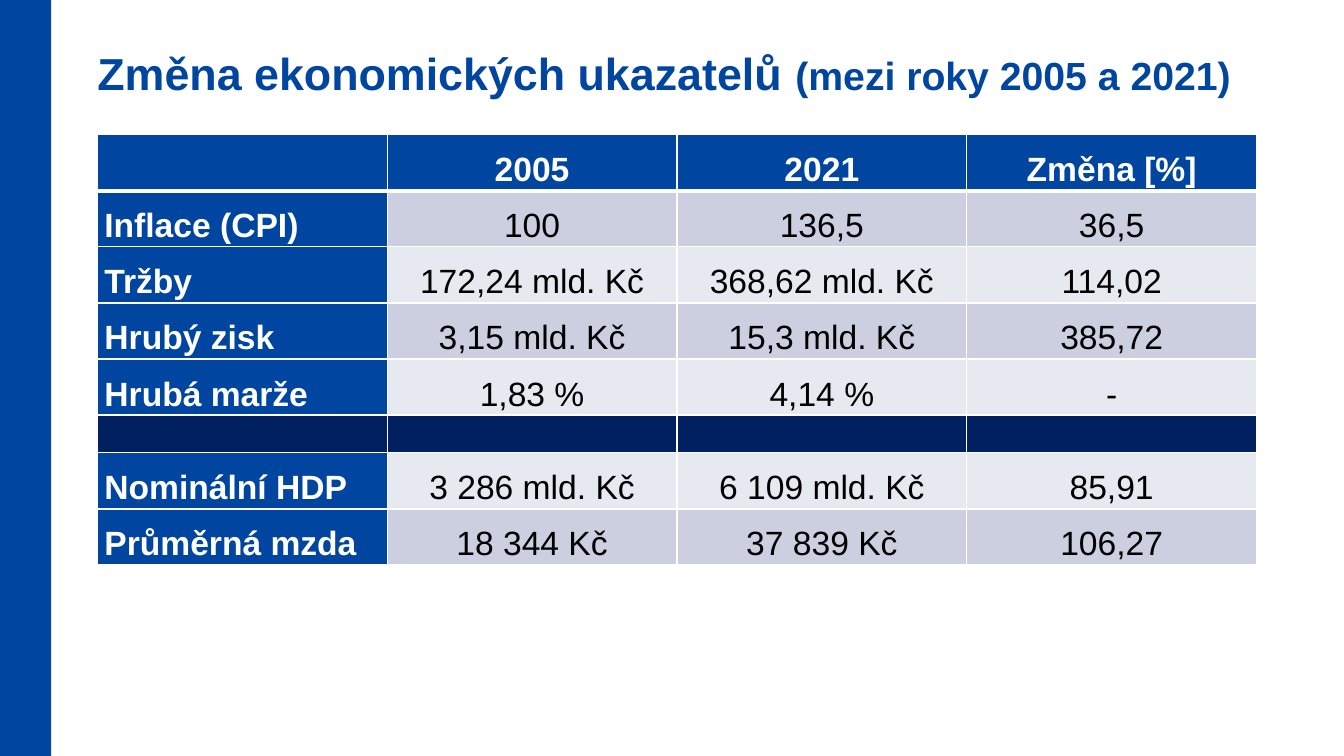
import pptx
import pptx.util
import pptx.dml.color
import pptx.enum.shapes
import pptx.enum.text
import pptx.oxml
import pptx.oxml.ns

Pt = pptx.util.Pt
RGB = pptx.dml.color.RGBColor.from_string
ALIGN = pptx.enum.text.PP_ALIGN
MIDDLE = pptx.enum.text.MSO_ANCHOR.MIDDLE

# Content: an empty row is the dark divider
TITLE = "Změna ekonomických ukazatelů "
PERIOD = "(mezi roky 2005 a 2021)"
ROWS = [
    ("", "2005", "2021", "Změna [%]"),
    ("Inflace (CPI)", "100", "136,5", "36,5"),
    ("Tržby", "172,24 mld. Kč", "368,62 mld. Kč", "114,02"),
    ("Hrubý zisk", "3,15 mld. Kč", "15,3 mld. Kč", "385,72"),
    ("Hrubá marže", "1,83 %", "4,14 %", "-"),
    ("", "", "", ""),
    ("Nominální HDP", "3 286 mld. Kč", "6 109 mld. Kč", "85,91"),
    ("Průměrná mzda", "18 344 Kč", "37 839 Kč", "106,27"),
]


class Theme:
    font = "Arial"
    blue, navy, white, black = "0046A0", "002060", "FFFFFF", "000000"
    bands = ("E7E9F0", "CCCFDF")
    title, period, cell = 32, 28, 24


SLIDE_W, SLIDE_H = 960, 540
LEFT, TABLE_TOP, TABLE_W = 69.6, 96.2, 828
ROW_H, DIVIDER_H = 40, 27


def add_text(p, text, size=Theme.cell, color=Theme.black, bold=False):
    r = p.add_run()
    r.text = text
    r.font.name = Theme.font
    r.font.size = Pt(size)
    r.font.bold = bold
    r.font.color.rgb = RGB(color)


def set_borders(cell, bottom=1, top=1):
    tcPr = cell._tc.get_or_add_tcPr()
    for side, width in (("L", 1), ("R", 1), ("T", top), ("B", bottom)):
        tcPr.append(pptx.oxml.parse_xml(
            f'<a:ln{side} {pptx.oxml.ns.nsdecls("a")} w="{int(Pt(width))}">'
            f'<a:solidFill><a:srgbClr val="{Theme.white}"/></a:solidFill></a:ln{side}>'))


prs = pptx.Presentation()
prs.slide_width, prs.slide_height = Pt(SLIDE_W), Pt(SLIDE_H)
s = prs.slides.add_slide(prs.slide_layouts[6])

# Side band
band = s.shapes.add_shape(pptx.enum.shapes.MSO_SHAPE.RECTANGLE, 0, 0, Pt(36.5), Pt(SLIDE_H))
band.shadow.inherit = False
band.fill.solid()
band.fill.fore_color.rgb = RGB(Theme.blue)
band.line.fill.background()

# Title
tf = s.shapes.add_textbox(Pt(LEFT), Pt(32.5), Pt(852.5), Pt(49)).text_frame
tf.word_wrap = True
tf.margin_left = tf.margin_right = tf.margin_top = tf.margin_bottom = 0
p = tf.paragraphs[0]
add_text(p, TITLE, size=Theme.title, color=Theme.blue, bold=True)
add_text(p, PERIOD, size=Theme.period, color=Theme.blue, bold=True)

# Table
heights = [ROW_H if any(row) else DIVIDER_H for row in ROWS]
n_cols = len(ROWS[0])
table = s.shapes.add_table(len(ROWS), n_cols, Pt(LEFT), Pt(TABLE_TOP),
                           Pt(TABLE_W), Pt(sum(heights))).table
table.first_col = True
for col in table.columns:
    col.width = Pt(TABLE_W / n_cols)

for i, row in enumerate(ROWS):
    table.rows[i].height = Pt(heights[i])
    for j, text in enumerate(row):
        cell = table.cell(i, j)
        heading = i == 0 or j == 0
        set_borders(cell, bottom=3 if i == 0 else 1, top=3 if i == 1 else 1)
        cell.fill.solid()
        fill = Theme.navy if not any(row) else Theme.blue if heading else Theme.bands[i % 2]
        cell.fill.fore_color.rgb = RGB(fill)
        cell.vertical_anchor = MIDDLE
        cell.margin_left = cell.margin_right = Pt(5)
        cell.margin_top = cell.margin_bottom = 0
        if text:
            p = cell.text_frame.paragraphs[0]
            p.alignment = ALIGN.CENTER if j else ALIGN.LEFT
            p.line_spacing = 1.39
            add_text(p, text, color=Theme.white if heading else Theme.black, bold=heading)

prs.save("out.pptx")
